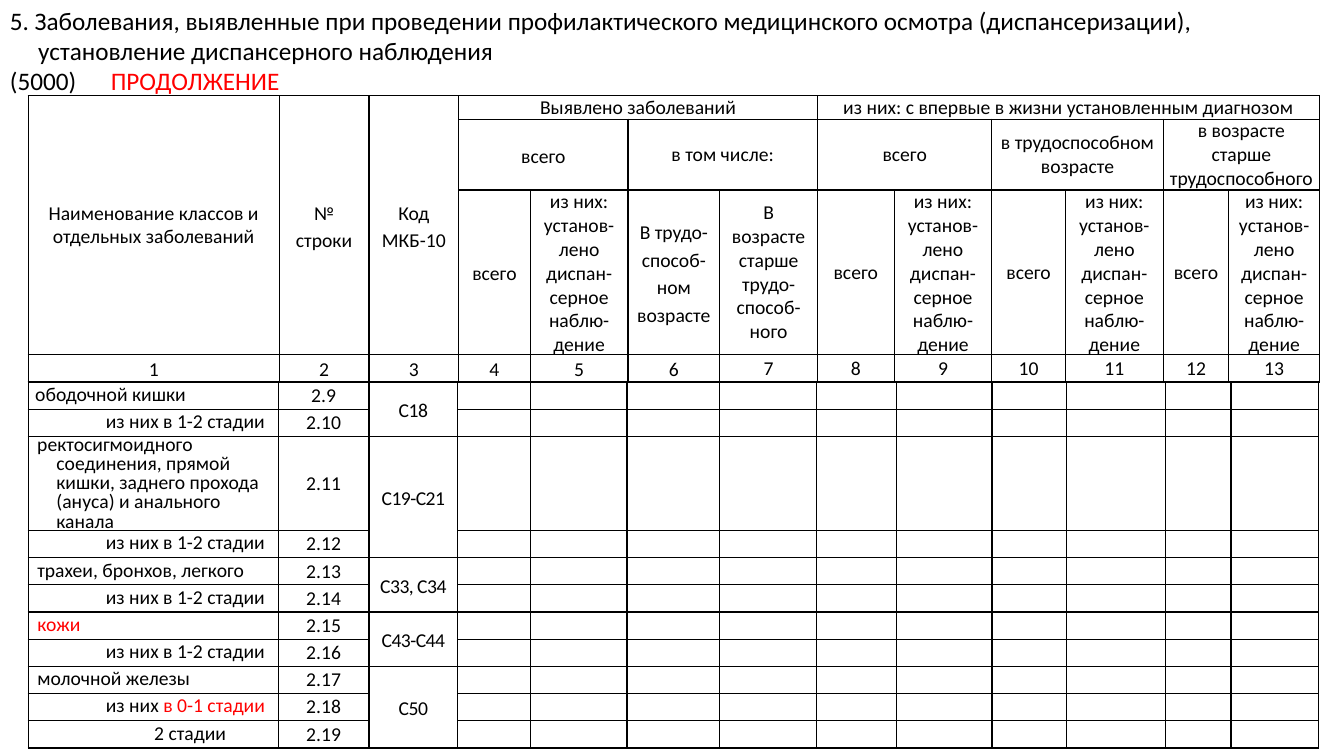
from dataclasses import dataclass

from lxml import etree
from pptx import Presentation
from pptx.dml.color import RGBColor
from pptx.enum import text
from pptx.oxml.ns import qn
from pptx.util import Inches, Pt


@dataclass(frozen=True)
class Theme:
    font: str = "Calibri"
    title: int = 18
    body: int = 14
    black: RGBColor = RGBColor(0, 0, 0)
    red: RGBColor = RGBColor(255, 0, 0)
    border: int = Pt(1)


THEME = Theme()
LEFT = 0.28
LOOSE = 1.15
TIGHT = 0.8
CENTER = text.PP_ALIGN.CENTER

HEAD_COLS = [2.49, 0.89, 0.89, 0.71, 0.97, 0.91, 0.97, 0.76, 0.97, 0.73, 0.97, 0.65, 0.9]
HEAD_ROWS = [0.23, 0.7, 1.63, 0.27]
BODY_COLS = [2.48, 0.9, 0.88, 0.72, 0.96, 0.92, 0.96, 0.79, 0.95, 0.74, 0.98, 0.65, 0.87]
ROW, TALL_ROW = 0.27, 0.93

OBSERVED = "из них:\nустанов-лено диспан-серное наблю-дение"
# row, column, row span, column span, text, line spacing
HEADINGS = [
    (0, 0, 3, 1, "Наименование классов и отдельных заболеваний", 1),
    (0, 1, 3, 1, "№ строки", LOOSE),
    (0, 2, 3, 1, "Код МКБ-10", LOOSE),
    (0, 3, 1, 4, "Выявлено заболеваний", 1),
    (0, 7, 1, 6, "из них: с впервые в жизни установленным диагнозом", 1),
    (1, 3, 1, 2, "всего", LOOSE),
    (1, 5, 1, 2, "в том числе:", 1),
    (1, 7, 1, 2, "всего", 1),
    (1, 9, 1, 2, "в трудоспособном возрасте", 1),
    (1, 11, 1, 2, "в возрасте старше трудоспособного", 1),
    (2, 3, 1, 1, "всего", LOOSE),
    (2, 4, 1, 1, OBSERVED, 1),
    (2, 5, 1, 1, "В трудо-способ-ном возрасте", LOOSE),
    (2, 6, 1, 1, "В возрасте старше трудо-способ-ного", 1),
] + [(2, col, 1, 1, "всего" if col % 2 else OBSERVED, 1) for col in range(7, 13)]

STAGES = ("из них в 1-2 стадии", "", 0.7, 0)
# black text, red text, left margin, first-line indent
DISEASES = [
    ("ободочной кишки", "", 0, 0),
    STAGES,
    ("ректосигмоидного соединения, прямой кишки, заднего прохода (ануса) и анального канала",
     "", 0.21, -0.19),
    STAGES,
    ("трахеи, бронхов, легкого", "", 0.02, 0),
    STAGES,
    ("", "кожи", 0.02, 0),
    STAGES,
    ("молочной железы", "", 0.02, 0),
    ("из них ", "в 0-1 стадии", 0.7, 0),
    ("2 стадии", "", 1.18, 0),
]
FIRST_LINE_NO = 9
LONG_DISEASE = 2
# code, number of rows it covers
CODES = [("С18", 2), ("С19-С21", 2), ("С33, С34", 2), ("С43-С44", 2), ("С50", 3)]


def style_paragraph(p, size, align=None, spacing=None):
    p.font.name, p.font.size = THEME.font, Pt(size)
    p.font.color.rgb = THEME.black
    p.alignment = align
    if spacing:
        p.line_spacing = spacing


def indent(p, margin, first=0):
    pPr = p._p.get_or_add_pPr()
    pPr.set("marL", str(Inches(margin)))
    pPr.set("indent", str(Inches(first)))


def add_runs(p, black, red=""):
    for content, color in ((black, THEME.black), (red, THEME.red)):
        if content:
            r = p.add_run()
            r.text = content
            if color == THEME.red:
                r.font.color.rgb = color


def add_title(s):
    tf = s.shapes.add_textbox(0, 0, Inches(13.22), Inches(1.01)).text_frame
    tf.word_wrap = True
    lines = [
        ("5. Заболевания, выявленные при проведении профилактического "
         "медицинского осмотра (диспансеризации),", "", 0),
        ("установление диспансерного наблюдения", "", 0.28),
        ("(5000)\t", "ПРОДОЛЖЕНИЕ", 0),
    ]
    for i, (black, red, margin) in enumerate(lines):
        p = tf.add_paragraph() if i else tf.paragraphs[0]
        add_runs(p, black, red)
        indent(p, margin)
        style_paragraph(p, THEME.title)
    tabs = etree.Element(qn("a:tabLst"))
    etree.SubElement(tabs, qn("a:tab"), pos=str(Inches(0.88)), algn="l")
    p._p.pPr.insert(0, tabs)


def style_cell(cell, inset):
    """Set thin black borders, no fill, side insets and a small empty line."""
    tcPr = cell._tc.get_or_add_tcPr()
    for side in ("lnL", "lnR", "lnT", "lnB"):
        ln = etree.SubElement(tcPr, qn("a:" + side), w=str(THEME.border))
        fill = etree.SubElement(ln, qn("a:solidFill"))
        etree.SubElement(fill, qn("a:srgbClr"), val=str(THEME.black))
    cell.fill.background()
    cell.vertical_anchor = text.MSO_ANCHOR.MIDDLE
    cell.margin_left = cell.margin_right = Inches(inset)
    cell.margin_top = cell.margin_bottom = 0
    end = etree.SubElement(cell.text_frame.paragraphs[0]._p, qn("a:endParaRPr"))
    end.set("sz", str(THEME.body * 100))


def add_grid(s, top, cols, rows, inset):
    table = s.shapes.add_table(len(rows), len(cols), Inches(LEFT), Inches(top),
                               Inches(sum(cols)), Inches(sum(rows))).table
    table.first_row = table.horz_banding = False
    for column, width in zip(table.columns, cols):
        column.width = Inches(width)
    for row, height in zip(table.rows, rows):
        row.height = Inches(height)
    for cell in table.iter_cells():
        style_cell(cell, inset)
    return table


def write_centered(cell, content, spacing=None):
    tf = cell.text_frame
    tf.text = content
    for p in tf.paragraphs:
        style_paragraph(p, THEME.body, CENTER, spacing)


def add_header_table(s):
    table = add_grid(s, 0.95, HEAD_COLS, HEAD_ROWS, 0.06)
    for row, col, height, width, content, spacing in HEADINGS:
        cell = table.cell(row, col)
        if height * width > 1:
            cell.merge(table.cell(row + height - 1, col + width - 1))
        write_centered(cell, content, spacing)
    for col in range(len(HEAD_COLS)):
        write_centered(table.cell(3, col), str(col + 1), LOOSE if col < 6 else 1)


def add_disease_table(s):
    rows = [TALL_ROW if i == LONG_DISEASE else ROW for i in range(len(DISEASES))]
    table = add_grid(s, 3.79, BODY_COLS, rows, 0.07)
    for row, (black, red, margin, first) in enumerate(DISEASES):
        p = table.cell(row, 0).text_frame.paragraphs[0]
        add_runs(p, black, red)
        indent(p, margin, first)
        style_paragraph(p, THEME.body, spacing=TIGHT)
        write_centered(table.cell(row, 1), f"2.{FIRST_LINE_NO + row}")
    row = 0
    for code, height in CODES:
        cell = table.cell(row, 2)
        cell.merge(table.cell(row + height - 1, 2))
        write_centered(cell, code, LOOSE)
        r = cell.text_frame.paragraphs[0].runs[0]
        r._r.get_or_add_rPr().set("spc", "-40")
        row += height


def main():
    prs = Presentation()
    prs.slide_width, prs.slide_height = Inches(13.33), Inches(7.5)
    s = prs.slides.add_slide(prs.slide_layouts[6])
    add_title(s)
    add_header_table(s)
    add_disease_table(s)
    prs.save("out.pptx")


if __name__ == "__main__":
    main()
